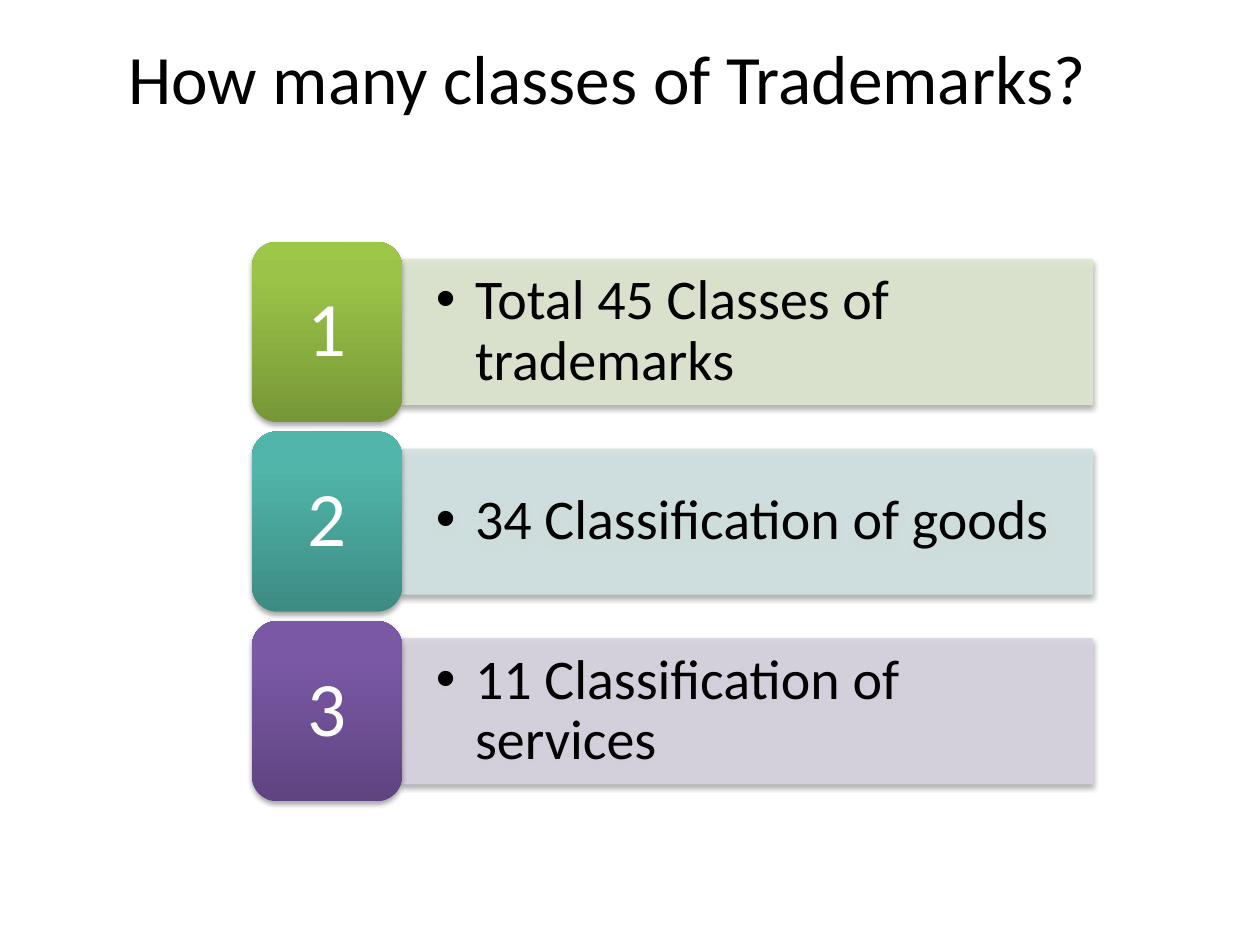
from dataclasses import dataclass

from lxml.etree import SubElement
from pptx import Presentation
from pptx.dml.color import RGBColor
from pptx.enum.shapes import MSO_SHAPE
from pptx.enum.text import MSO_ANCHOR, PP_ALIGN
from pptx.oxml.ns import qn
from pptx.shapes.autoshape import Shape
from pptx.slide import Slide
from pptx.text.text import _Paragraph as Paragraph
from pptx.util import Inches, Pt


@dataclass(frozen=True)
class Theme:
    font: str = "Calibri"
    ink: str = "000000"
    number_ink: str = "FFFFFF"
    title_size: float = 39.6
    bar_size: float = 32
    number_size: float = 44


@dataclass(frozen=True)
class ClassRow:
    number: str
    text: str
    bar_color: str
    tile_stops: tuple[tuple[int, str], ...]  # percent from the bottom, colour


THEME = Theme()
ROWS = (
    ClassRow("1", "Total 45 Classes of trademarks", "DEE7D1",
             ((0, "779737"), (80, "9BC348"), (100, "9DC746"))),
    ClassRow("2", "34 Classification of goods", "D2E3E2",
             ((0, "3D8B83"), (80, "50B5AA"), (100, "4EB8AC"))),
    ClassRow("3", "11 Classification of services", "D8D3E0",
             ((0, "5F4480"), (80, "7B58A6"), (100, "7C57A8"))),
)
TILE_LEFT, TILE_WIDTH, TILE_HEIGHT = 2, 1.19, 1.43
BAR_WIDTH, BAR_HEIGHT = 5.48, 1.15
FIRST_TOP, ROW_PITCH = 1.92, 1.505


def add_color(parent, color: str, opacity: int = 100) -> None:
    element = SubElement(parent, qn("a:srgbClr"), val=color)
    if opacity < 100:
        SubElement(element, qn("a:alpha"), val=str(opacity * 1000))


def add_soft_shadow(shape: Shape) -> None:
    shape.shadow.inherit = False
    effects = shape._element.spPr.find(qn("a:effectLst"))
    shadow = SubElement(effects, qn("a:outerShdw"), blurRad=str(Pt(3.1)),
                        dist=str(Pt(1.8)), dir="5400000", rotWithShape="0")
    add_color(shadow, "000000", 35)


def fill_gradient(shape: Shape, stops: tuple[tuple[int, str], ...]) -> None:
    shape.fill.gradient()
    shape.fill.gradient_angle = 90
    stop_list = shape._element.spPr.find(qn("a:gradFill")).find(qn("a:gsLst"))
    for old_stop in list(stop_list):
        stop_list.remove(old_stop)
    for percent, color in stops:
        add_color(SubElement(stop_list, qn("a:gs"), pos=str(percent * 1000)), color)


def set_text(shape: Shape, text: str, size: float, color: str,
             inset_x: float, inset_y: float) -> Paragraph:
    frame = shape.text_frame
    frame.word_wrap = True
    frame.vertical_anchor = MSO_ANCHOR.MIDDLE
    frame.margin_left = frame.margin_right = Inches(inset_x)
    frame.margin_top = frame.margin_bottom = Inches(inset_y)
    frame.text = text
    para = frame.paragraphs[0]
    for span in para.runs:
        span.font.name = THEME.font
        span.font.size = Pt(size)
        span.font.color.rgb = RGBColor.from_string(color)
    return para


def add_bullet(para: Paragraph, indent: float) -> None:
    properties = para._p.get_or_add_pPr()
    properties.set("marL", str(Inches(indent)))
    properties.set("indent", str(-Inches(indent)))
    SubElement(properties, qn("a:buFont"), typeface="Arial")
    SubElement(properties, qn("a:buChar"), char="•")


def add_title(page: Slide, text: str) -> None:
    box = page.shapes.add_textbox(Inches(0.92), Inches(0.28), Inches(8.83), Inches(1.25))
    set_text(box, text, THEME.title_size, THEME.ink, 0.1, 0)
    box.text_frame.vertical_anchor = MSO_ANCHOR.TOP


def add_bar(page: Slide, row: ClassRow, top: float) -> None:
    bar = page.shapes.add_shape(
        MSO_SHAPE.RECTANGLE, Inches(TILE_LEFT + TILE_WIDTH),
        Inches(top + (TILE_HEIGHT - BAR_HEIGHT) / 2), Inches(BAR_WIDTH), Inches(BAR_HEIGHT))
    bar.line.width = Pt(0.75)
    for fill in (bar.fill, bar.line.fill):
        fill.solid()
        fill.fore_color.rgb = RGBColor.from_string(row.bar_color)
    for color in bar._element.spPr.iter(qn("a:srgbClr")):
        SubElement(color, qn("a:alpha"), val="90000")
    add_soft_shadow(bar)
    para = set_text(bar, row.text, THEME.bar_size, THEME.ink, 0.27, 0.14)
    para.alignment = PP_ALIGN.LEFT
    para.line_spacing = 0.9
    add_bullet(para, 0.31)


def add_tile(page: Slide, row: ClassRow, top: float) -> None:
    tile = page.shapes.add_shape(
        MSO_SHAPE.ROUNDED_RECTANGLE, Inches(TILE_LEFT), Inches(top),
        Inches(TILE_WIDTH), Inches(TILE_HEIGHT))
    fill_gradient(tile, row.tile_stops)
    tile.line.fill.background()
    add_soft_shadow(tile)
    para = set_text(tile, row.number, THEME.number_size, THEME.number_ink, 0.18, 0.09)
    para.alignment = PP_ALIGN.CENTER
    para.line_spacing = 0.9


def main() -> None:
    deck = Presentation()
    deck.slide_width, deck.slide_height = Inches(10), Inches(7.5)
    page = deck.slides.add_slide(deck.slide_layouts[6])
    for index, row in enumerate(ROWS):
        top = FIRST_TOP + index * ROW_PITCH
        add_bar(page, row, top)
        add_tile(page, row, top)
    add_title(page, "How many classes of Trademarks?")
    deck.save("out.pptx")


if __name__ == "__main__":
    main()
